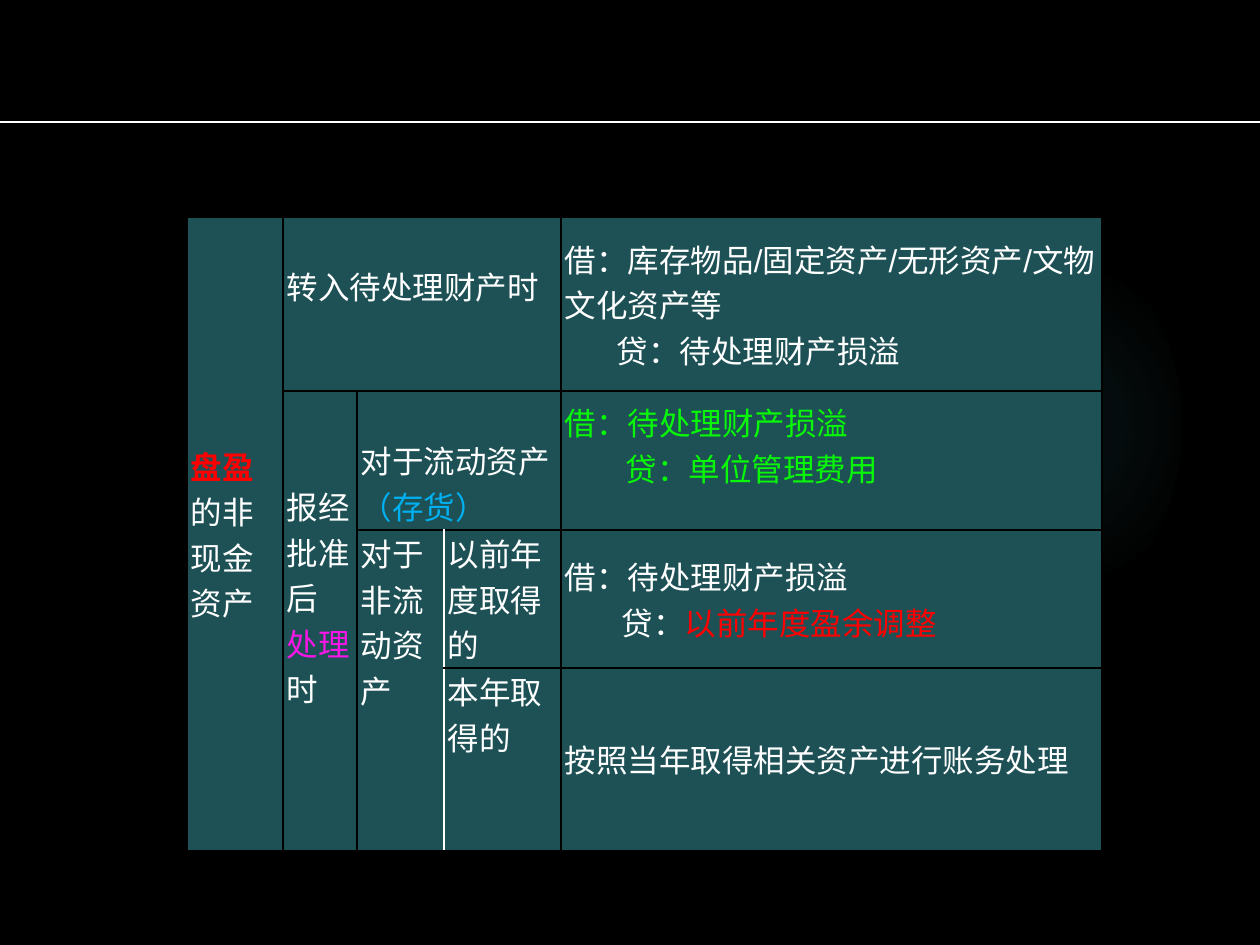
from lxml import etree
from pptx import Presentation
from pptx.dml.color import RGBColor
from pptx.enum.shapes import MSO_SHAPE as Shape
from pptx.enum.text import MSO_ANCHOR as Anchor
from pptx.oxml import parse_xml
from pptx.oxml.ns import nsdecls, qn
from pptx.util import Emu, Pt

EMU_PER_PX = 914400 / 126
BLACK = RGBColor(0x00, 0x00, 0x00)
WHITE = RGBColor(0xFF, 0xFF, 0xFF)
TEAL = RGBColor(0x1E, 0x51, 0x55)
GLOW = RGBColor(0x50, 0xB9, 0xC1)
RED = RGBColor(0xFF, 0x00, 0x00)
MAGENTA = RGBColor(0xF6, 0x16, 0xE6)
BLUE = RGBColor(0x00, 0xB0, 0xF0)
GREEN = RGBColor(0x09, 0xF7, 0x09)
LATIN_FONT = "Arial"
CJK_FONT = "Noto Sans CJK SC"

COLUMNS = [96, 74, 87, 117, 541]
ROWS = [174, 139, 138, 182]
LINE = 46
MERGES = [((0, 0), (3, 0)), ((0, 1), (0, 3)), ((1, 1), (3, 1)),
          ((1, 2), (1, 3)), ((2, 2), (3, 2))]

# row, column, anchor, top margin, paragraphs of (indent, [(text, colour), ...])
CELLS = [
    (0, 0, Anchor.MIDDLE, 0, [(0, [("盘盈", RED), ("的非现金资产", WHITE)])]),
    (0, 1, Anchor.TOP, LINE, [(0, [("转入待处理财产时", WHITE)])]),
    (0, 4, Anchor.MIDDLE, 0, [
        (0, [("借：库存物品/固定资产/无形资产/文物文化资产等", WHITE)]),
        (52, [("贷：待处理财产损溢", WHITE)])]),
    (1, 1, Anchor.TOP, 2 * LINE, [
        (0, [("报经批准后", WHITE)]),
        (0, [("处理", MAGENTA), ("时", WHITE)])]),
    (1, 2, Anchor.TOP, LINE, [
        (0, [("对于流动资产", WHITE), ("（存货）", BLUE)])]),
    (1, 4, Anchor.TOP, 8, [
        (0, [("借：待处理财产损溢", GREEN)]),
        (61, [("贷：单位管理费用", GREEN)])]),
    (2, 2, Anchor.TOP, 0, [(0, [("对于非流动资产", WHITE)])]),
    (2, 3, Anchor.TOP, 0, [(0, [("以前年度取得的", WHITE)])]),
    (2, 4, Anchor.MIDDLE, 0, [
        (0, [("借：待处理财产损溢", WHITE)]),
        (57, [("贷：", WHITE), ("以前年度盈余调整", RED)])]),
    (3, 3, Anchor.TOP, 0, [(0, [("本年取得的", WHITE)])]),
    (3, 4, Anchor.MIDDLE, 0, [
        (0, [("按照当年取得相关资产进行账务处理", WHITE)])]),
]


def px(length):
    return Emu(round(length * EMU_PER_PX))


def add_plain_shape(page, kind, *place):
    shape = page.shapes.add_shape(kind, *map(px, place))
    shape.shadow.inherit = False
    shape.line.fill.background()
    return shape


def add_glow(page):
    glow = add_plain_shape(page, Shape.OVAL, 890, 231, 291, 388)
    stops = "".join(
        f'<a:gs pos="{position * 1000}"><a:srgbClr val="{GLOW}">'
        f'<a:alpha val="{alpha * 1000}"/></a:srgbClr></a:gs>'
        for position, alpha in [(0, 7), (36, 6), (69, 0)])
    gradient = parse_xml(
        f'<a:gradFill {nsdecls("a")}><a:gsLst>{stops}</a:gsLst>'
        '<a:path path="circle"><a:fillToRect l="50000" t="50000" '
        'r="50000" b="50000"/></a:path></a:gradFill>')
    glow._element.spPr.find(qn("a:prstGeom")).addnext(gradient)


def add_rule(page):
    rule = add_plain_shape(page, Shape.MATH_MINUS, -233, 117, 1736, 10)
    rule.fill.solid()
    rule.fill.fore_color.rgb = WHITE


def set_borders(cell, colours):
    properties = cell._tc.get_or_add_tcPr()
    for index, side in enumerate(["L", "R", "T", "B"]):
        line = etree.Element(qn(f"a:ln{side}"), w=str(Pt(1)))
        fill = etree.SubElement(line, qn("a:solidFill"))
        etree.SubElement(fill, qn("a:srgbClr"), val=str(colours.get(side, BLACK)))
        properties.insert(index, line)


def style_cell(cell, row, column):
    cell.fill.solid()
    cell.fill.fore_color.rgb = TEAL
    cell.margin_left = cell.margin_right = px(4)
    cell.margin_top = cell.margin_bottom = 0
    white_side = {2: "R", 3: "L"}.get(column) if row >= 2 else None
    set_borders(cell, {white_side: WHITE})


def style_span(span, colour):
    span.font.size = Pt(18)
    span.font.name = LATIN_FONT
    span.font.color.rgb = colour
    span.font.bold = span.text == "盘盈"
    east_asian = etree.Element(qn("a:ea"), typeface=CJK_FONT)
    span.font._element.find(qn("a:latin")).addnext(east_asian)


def fill_cell(cell, anchor, top, paragraphs):
    cell.vertical_anchor = anchor
    cell.margin_top = px(top)
    frame = cell.text_frame
    for number, (indent, spans) in enumerate(paragraphs):
        para = frame.add_paragraph() if number else frame.paragraphs[0]
        if indent:
            para._p.get_or_add_pPr().set("marL", str(px(indent)))
        for text, colour in spans:
            span = para.add_run()
            span.text = text
            style_span(span, colour)


def add_entries_table(page):
    frame = page.shapes.add_table(len(ROWS), len(COLUMNS), px(187), px(217),
                                  px(sum(COLUMNS)), px(sum(ROWS)))
    table = frame.table
    table.first_row = table.horz_banding = False
    for column, width in zip(table.columns, COLUMNS):
        column.width = px(width)
    for row, height in zip(table.rows, ROWS):
        row.height = px(height)
    for row in range(len(ROWS)):
        for column in range(len(COLUMNS)):
            style_cell(table.cell(row, column), row, column)
    for first, last in MERGES:
        table.cell(*first).merge(table.cell(*last))
    for row, column, anchor, top, paragraphs in CELLS:
        fill_cell(table.cell(row, column), anchor, top, paragraphs)


def main():
    deck = Presentation()
    deck.slide_width, deck.slide_height = px(1260), px(945)
    page = deck.slides.add_slide(deck.slide_layouts[6])
    page.background.fill.solid()
    page.background.fill.fore_color.rgb = BLACK
    add_glow(page)
    add_rule(page)
    add_entries_table(page)
    deck.save("out.pptx")


if __name__ == "__main__":
    main()
